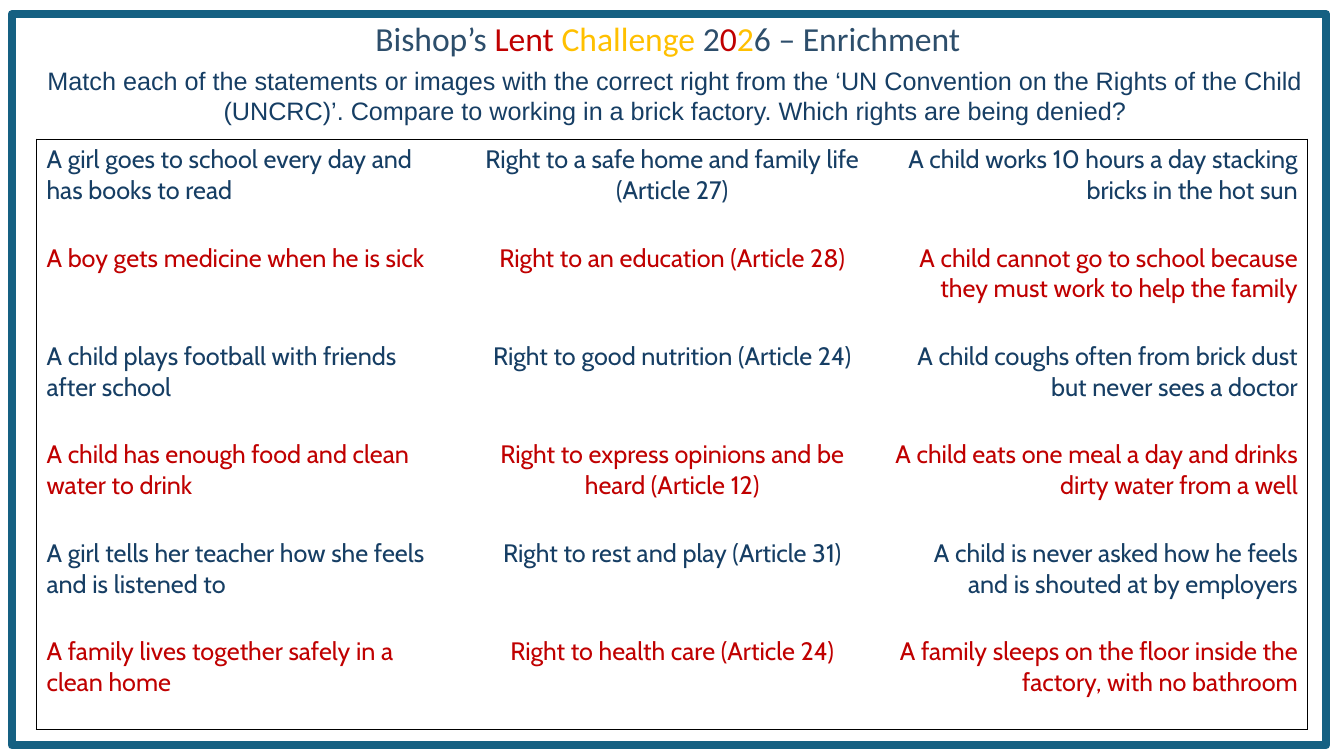
"""Build the Lent challenge slide that matches statements with children's rights."""
from lxml.etree import SubElement
from pptx import Presentation
from pptx.dml.color import RGBColor
from pptx.enum.shapes import MSO_SHAPE as SHAPE
from pptx.enum.text import MSO_ANCHOR as ANCHOR, MSO_AUTO_SIZE as AUTO, PP_ALIGN as ALIGN
from pptx.oxml.ns import qn
from pptx.util import Cm, Pt

NAVY, SLATE, RED, GOLD = "163E64", "2D4E6B", "C00000", "FFC000"
TEAL, WHITE, BLACK = "156082", "FFFFFF", "000000"
TITLE = [("Bishop’s ", SLATE), ("Lent ", RED), ("Challenge ", GOLD), ("2", SLATE),
         ("0", RED), ("2", GOLD), ("6 – Enrichment", SLATE)]
TASK = ("Match each of the statements or images with the correct right from the "
        "‘UN Convention on the Rights of the Child (UNCRC)’. Compare to working in "
        "a brick factory. Which rights are being denied?")
ROWS = [
    ("A girl goes to school every day and has books to read",
     "Right to a safe home and family life (Article 27)",
     "A child works 10 hours a day stacking bricks in the hot sun"),
    ("A boy gets medicine when he is sick",
     "Right to an education (Article 28)",
     "A child cannot go to school because they must work to help the family"),
    ("A child plays football with friends after school",
     "Right to good nutrition (Article 24)",
     "A child coughs often from brick dust but never sees a doctor"),
    ("A child has enough food and clean water to drink",
     "Right to express opinions and be heard (Article 12)",
     "A child eats one meal a day and drinks dirty water from a well"),
    ("A girl tells her teacher how she feels and is listened to",
     "Right to rest and play (Article 31)",
     "A child is never asked how he feels and is shouted at by employers"),
    ("A family lives together safely in a clean home",
     "Right to health care (Article 24)",
     "A family sleeps on the floor inside the factory, with no bathroom"),
]
ALIGNS = (ALIGN.LEFT, ALIGN.CENTER, ALIGN.RIGHT)
COL_W, ROW_H = Cm(10.68), Cm(2.48)


def rgb(value):
    return RGBColor.from_string(value)


def format_run(r, font, size, color):
    r.font.name, r.font.size, r.font.bold = font, Pt(size), False
    r.font.color.rgb = rgb(color)


def add_title(slide):
    sp = slide.shapes.title
    sp.left, sp.top, sp.width, sp.height = Cm(0.43), Cm(0.13), Cm(32.8), Cm(2.18)
    tf = sp.text_frame
    tf.auto_size, tf.vertical_anchor = AUTO.NONE, ANCHOR.TOP
    p = tf.paragraphs[0]
    p.alignment, p.line_spacing, p.space_after = ALIGN.CENTER, 1.19, Pt(6)
    p.space_before = Pt(0)
    for text, color in TITLE:
        r = p.add_run()
        r.text = text
        format_run(r, "Calibri", 24, color)


def add_frame(slide):
    sp = slide.shapes.add_shape(SHAPE.RECTANGLE, Cm(0.3), Cm(0.36), Cm(33.12), Cm(18.42))
    sp.shadow.inherit = False
    sp.fill.solid()
    sp.fill.fore_color.rgb = rgb(WHITE)
    sp.line.color.rgb = rgb(TEAL)
    sp.line.width = Pt(6)
    slide.shapes.title.element.addprevious(sp.element)


def add_task(slide):
    sp = slide.shapes.add_textbox(Cm(0.61), Cm(1.52), Cm(32.8), Cm(1.8))
    tf = sp.text_frame
    tf.word_wrap = True
    p = tf.paragraphs[0]
    p.text, p.alignment = TASK, ALIGN.CENTER
    format_run(p.runs[0], "Arial", 18, NAVY)


def set_borders(cell, visible):
    tc_pr = cell.get_or_add_tcPr() if hasattr(cell, "get_or_add_tcPr") else cell
    for side in "LRTB":
        ln = SubElement(tc_pr, qn(f"a:ln{side}"), w=str(Pt(1)))
        if side in visible:
            fill = SubElement(ln, qn("a:solidFill"))
            SubElement(fill, qn("a:srgbClr"), val=BLACK)
        else:
            SubElement(ln, qn("a:noFill"))


def fill_cell(cell, text, align, color, visible):
    set_borders(cell._tc, visible)
    cell.fill.solid()
    cell.fill.fore_color.rgb = rgb(WHITE)
    p = cell.text_frame.paragraphs[0]
    p.text, p.alignment = text, align
    format_run(p.runs[0], "Cabin", 18, color)


def add_rights_table(slide):
    n_rows, n_cols = len(ROWS), len(ALIGNS)
    table = slide.shapes.add_table(n_rows, n_cols, Cm(0.92), Cm(3.51),
                                   COL_W * n_cols, ROW_H * n_rows).table
    table.first_row = table.horz_banding = False
    for col in table.columns:
        col.width = COL_W
    for i, texts in enumerate(ROWS):
        table.rows[i].height = ROW_H
        for j, text in enumerate(texts):
            edges = {"L": j == 0, "R": j == n_cols - 1, "T": i == 0, "B": i == n_rows - 1}
            visible = [side for side, outer in edges.items() if outer]
            fill_cell(table.cell(i, j), text, ALIGNS[j], (NAVY, RED)[i % 2], visible)


def main():
    prs = Presentation()
    prs.slide_width, prs.slide_height = Cm(33.87), Cm(19.05)
    slide = prs.slides.add_slide(prs.slide_layouts[5])
    add_frame(slide)
    add_title(slide)
    add_task(slide)
    add_rights_table(slide)
    prs.save("out.pptx")


if __name__ == "__main__":
    main()
